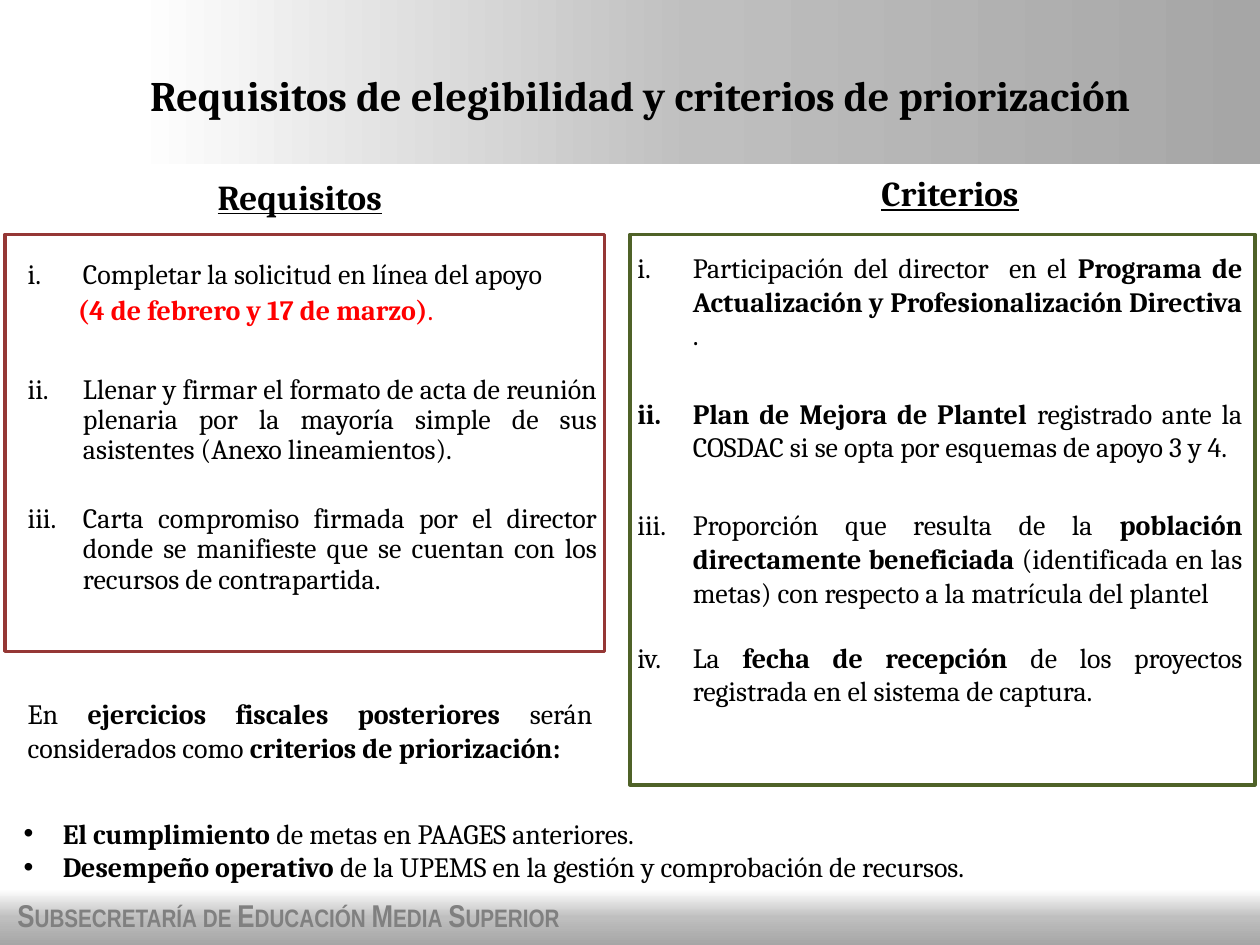
from copy import deepcopy
from dataclasses import dataclass

from lxml import etree
from pptx import Presentation
from pptx.dml.color import RGBColor
from pptx.enum import shapes, text
from pptx.oxml.ns import qn
from pptx.util import Inches, Pt


@dataclass(frozen=True)
class Theme:
    font: str = "Cambria"
    footer_font: str = "Arial Narrow"
    ink: str = "000000"
    alert: str = "FF0000"
    footer_ink: str = "808080"
    requirements: str = "953735"
    criteria: str = "4F6228"
    fade: tuple = ((0, "FFFFFF"), (0.5, "BFBFBF"), (1, "A6A6A6"))
    title: int = 24
    heading: int = 20
    footer: int = 18
    body: int = 16


THEME = Theme()
ALIGN = text.PP_ALIGN


def add_rect(slide, left, top, width, height):
    rect = slide.shapes.add_shape(shapes.MSO_SHAPE.RECTANGLE, Inches(left),
                                  Inches(top), Inches(width), Inches(height))
    rect.shadow.inherit = False
    return rect


def add_band(slide, left, top, width, height, angle):
    """Borderless band with the grey fade."""
    band = add_rect(slide, left, top, width, height)
    band.line.fill.background()
    band.fill.gradient()
    band.fill.gradient_angle = angle
    stops = band.fill.gradient_stops
    first = band.fill._fill._gradFill.find(qn("a:gsLst"))[0]
    first.addnext(deepcopy(first))
    stops = band.fill.gradient_stops
    for stop, (position, color) in zip(stops, THEME.fade):
        stop.position = position
        stop.color.rgb = RGBColor.from_string(color)


def add_frame(slide, left, top, width, height, color):
    """Unfilled frame around a list."""
    frame = add_rect(slide, left, top, width, height)
    frame.fill.background()
    frame.line.color.rgb = RGBColor.from_string(color)
    frame.line.width = Pt(2)


def set_bullet(paragraph, bullet, start):
    props = paragraph._p.get_or_add_pPr()
    if bullet == "roman":
        number = etree.SubElement(props, qn("a:buAutoNum"), type="romanLcPeriod")
        if start > 1:
            number.set("startAt", str(start))
    else:
        etree.SubElement(props, qn("a:buFont"), typeface="Arial")
        etree.SubElement(props, qn("a:buChar"), char=bullet)


def write(paragraph, runs, *, size=THEME.body, font=THEME.font, color=THEME.ink,
          bold=False, underline=False, small_caps=False, align=ALIGN.JUSTIFY,
          bullet=None, start=1, margin=0, hanging=0, before=0, after=0, spacing=1):
    """Write runs into a paragraph; text between asterisks turns bold."""
    if bullet:
        set_bullet(paragraph, bullet, start)
    if margin:
        props = paragraph._p.get_or_add_pPr()
        props.set("marL", str(Inches(margin)))
        props.set("indent", str(-Inches(hanging)))
    paragraph.alignment = align
    paragraph.line_spacing = spacing
    paragraph.space_before, paragraph.space_after = Pt(before), Pt(after)
    for index, part in enumerate(runs.split("*")):
        if not part:
            continue
        run = paragraph.add_run()
        run.text = part
        run.font.name, run.font.size = font, Pt(size)
        run.font.color.rgb = RGBColor.from_string(color)
        run.font.bold = bold or index % 2 == 1
        if underline:
            run.font.underline = True
        if small_caps:
            run.font._element.set("cap", "small")


def add_text(slide, left, top, width, height, items, anchor=text.MSO_ANCHOR.TOP,
             **shared):
    """Text box from (text, format) items, with the shared format below each."""
    box = slide.shapes.add_textbox(Inches(left), Inches(top), Inches(width),
                                   Inches(height))
    frame = box.text_frame
    frame.word_wrap = True
    frame.vertical_anchor = anchor
    for index, (words, own) in enumerate(items):
        paragraph = frame.add_paragraph() if index else frame.paragraphs[0]
        write(paragraph, words, **{**shared, **own})


def main():
    deck = Presentation()
    deck.slide_width, deck.slide_height = Inches(10), Inches(7.5)
    slide = deck.slides.add_slide(deck.slide_layouts[6])

    # Footer and title bands
    add_band(slide, 0, 7.06, 10, 0.44, angle=270)
    add_text(slide, 0.04, 7.06, 6.46, 0.4,
             [("Subsecretaría de Educación Media Superior", {})],
             size=THEME.footer, font=THEME.footer_font, color=THEME.footer_ink,
             bold=True, small_caps=True, align=ALIGN.LEFT)
    add_band(slide, 1.06, 0, 8.94, 1.3, angle=0)
    add_text(slide, 0.58, 0.13, 9, 1.25,
             [("Requisitos de elegibilidad y criterios de priorización", {})],
             anchor=text.MSO_ANCHOR.MIDDLE, size=THEME.title, bold=True,
             align=ALIGN.CENTER)

    # Column headings
    for heading, left, top in (("Requisitos", -0.12, 1.34), ("Criterios", 5.04, 1.31)):
        add_text(slide, left, top, 5, 0.44, [(heading, {})], size=THEME.heading,
                 bold=True, underline=True, align=ALIGN.CENTER)

    # Requirements
    roman = dict(bullet="roman", margin=0.44, hanging=0.44)
    add_text(slide, 0.12, 2.02, 4.72, 3.62, [
        ("Completar la solicitud en línea del apoyo", roman),
        ("*(4 de febrero y 17 de marzo)*.", dict(color=THEME.alert, margin=0.4)),
        ("Llenar y firmar el formato de acta de reunión plenaria por la mayoría "
         "simple de sus asistentes (Anexo lineamientos).",
         dict(roman, start=2, before=25)),
        ("Carta compromiso firmada por el director donde se manifieste que se "
         "cuentan con los recursos de contrapartida.",
         dict(roman, start=2, before=19)),
    ], spacing=0.9, after=3)
    add_frame(slide, 0.04, 1.86, 4.76, 3.31, THEME.requirements)

    # Criteria
    add_text(slide, 4.96, 1.94, 5, 4.29, [
        ("Participación del director  en el *Programa de Actualización y "
         "Profesionalización Directiva *.", {}),
        ("*Plan de Mejora de Plantel *registrado ante la COSDAC si se opta por "
         "esquemas de apoyo 3 y 4.", dict(before=25.5)),
        ("Proporción que resulta de la *población directamente beneficiada* "
         "(identificada en las metas) con respecto a la matrícula del plantel",
         dict(before=25.5)),
        ("La *fecha de recepción *de los proyectos registrada en el sistema de "
         "captura.", dict(before=18)),
    ], **roman)
    add_frame(slide, 5, 1.86, 4.96, 4.37, THEME.criteria)

    # Later fiscal years
    add_text(slide, 0.12, 5.48, 4.68, 0.99, [
        ("En *ejercicios fiscales posteriores *serán considerados como "
         "*criterios de priorización:*", {})])
    add_text(slide, 0.09, 6.43, 9.8, 0.64, [
        ("*El cumplimiento *de metas en PAAGES anteriores.", {}),
        ("*Desempeño operativo* de la UPEMS en la gestión y comprobación de "
         "recursos.", {}),
    ], bullet="•", margin=0.31, hanging=0.31)

    deck.save("out.pptx")


if __name__ == "__main__":
    main()
